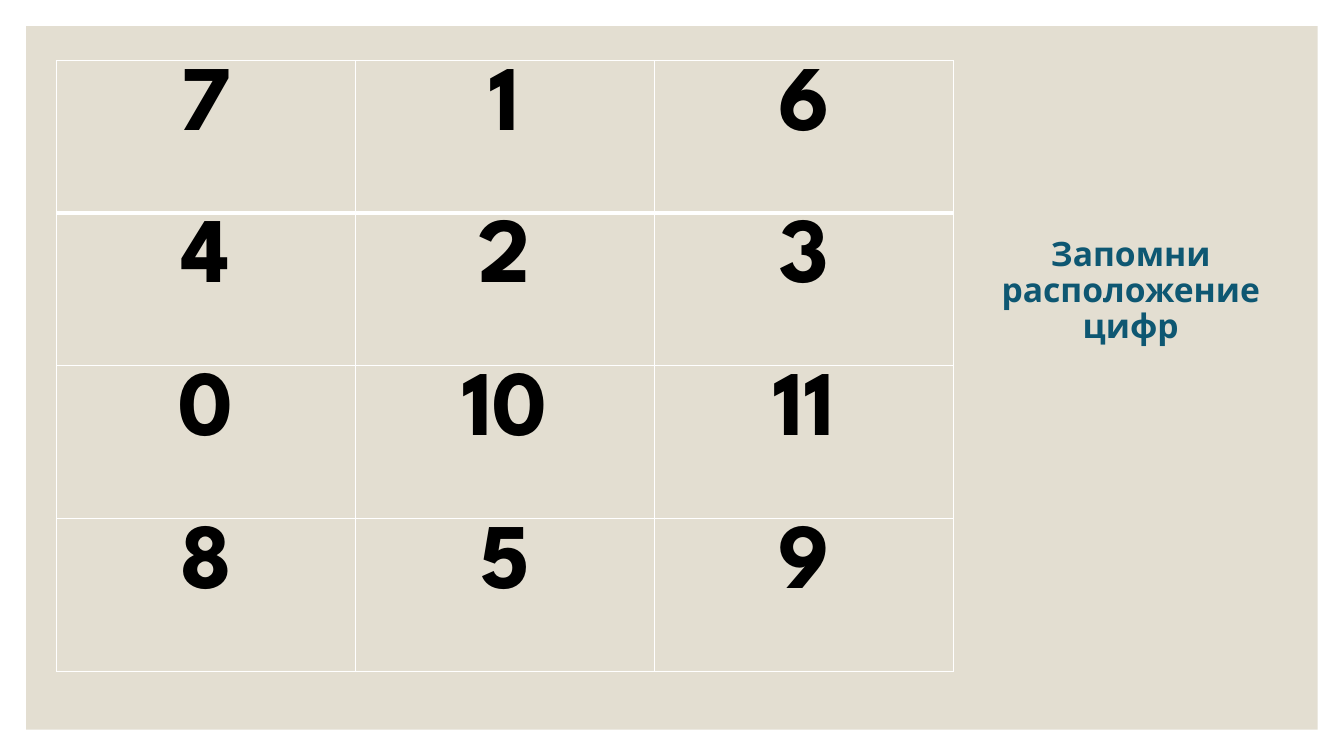
from dataclasses import dataclass

from lxml import etree
from pptx import Presentation
from pptx import util as u
from pptx.dml.color import RGBColor
from pptx.enum import shapes, text
from pptx.oxml.ns import qn


@dataclass(frozen=True)
class Theme:
    panel: str = "E3DED1"
    heading: str = "0E5772"
    digit: str = "000000"
    grid: str = "FFFFFF"
    font: str = "League Spartan"
    heading_size: int = 24
    digit_size: int = 66
    thin: int = 1
    thick: int = 3


theme = Theme()


def write(frame, content, *, size, color, spacing=None):
    """Put one centred bold paragraph into a text frame."""
    paragraph = frame.paragraphs[0]
    paragraph.alignment = text.PP_ALIGN.CENTER
    paragraph.line_spacing = spacing
    run = paragraph.add_run()
    run.text = content
    run.font.name = theme.font
    run.font.size = u.Pt(size)
    run.font.bold = True
    run.font.color.rgb = RGBColor.from_string(color)


def draw_border(cell, side, width):
    line = etree.SubElement(cell._tc.get_or_add_tcPr(), qn(f"a:ln{side}"), w=str(u.Pt(width)))
    fill = etree.SubElement(line, qn("a:solidFill"))
    etree.SubElement(fill, qn("a:srgbClr"), val=theme.grid)


deck = Presentation()
deck.slide_width, deck.slide_height = u.Inches(13.33), u.Inches(7.5)
slide = deck.slides.add_slide(deck.slide_layouts[5])

# Panel with an equal margin on every side
margin = u.Inches(0.26)
panel = slide.shapes.add_shape(
    shapes.MSO_SHAPE.RECTANGLE, margin, margin,
    deck.slide_width - 2 * margin, deck.slide_height - 2 * margin)
panel.shadow.inherit = False
panel.fill.solid()
panel.fill.fore_color.rgb = RGBColor.from_string(theme.panel)
panel.line.fill.background()
slide.shapes._spTree.insert(2, panel._element)

# Instruction on the right
instruction = slide.shapes.title
instruction.left, instruction.top = u.Inches(9.67), u.Inches(1.23)
instruction.width, instruction.height = u.Inches(3.09), u.Inches(3.33)
instruction.text_frame.word_wrap = True
instruction.text_frame.auto_size = text.MSO_AUTO_SIZE.NONE
instruction.text_frame.vertical_anchor = text.MSO_ANCHOR.MIDDLE
write(instruction.text_frame, "Запомни расположение цифр",
      size=theme.heading_size, color=theme.heading, spacing=0.9)

# Grid of numbers to memorise
numbers = [
    [7, 1, 6],
    [4, 2, 3],
    [0, 10, 11],
    [8, 5, 9],
]
grid = slide.shapes.add_table(
    len(numbers), len(numbers[0]),
    u.Inches(0.56), u.Inches(0.6), u.Inches(8.9), u.Inches(6.06)).table
grid.first_row = grid.horz_banding = False

for row, values in enumerate(numbers):
    # The rule below the first row is heavier than the rest
    widths = {
        "L": theme.thin,
        "R": theme.thin,
        "T": theme.thick if row == 1 else theme.thin,
        "B": theme.thick if row == 0 else theme.thin,
    }
    for column, number in enumerate(values):
        cell = grid.cell(row, column)
        for side, width in widths.items():
            draw_border(cell, side, width)
        cell.fill.background()
        write(cell.text_frame, str(number), size=theme.digit_size, color=theme.digit)

deck.save("out.pptx")
